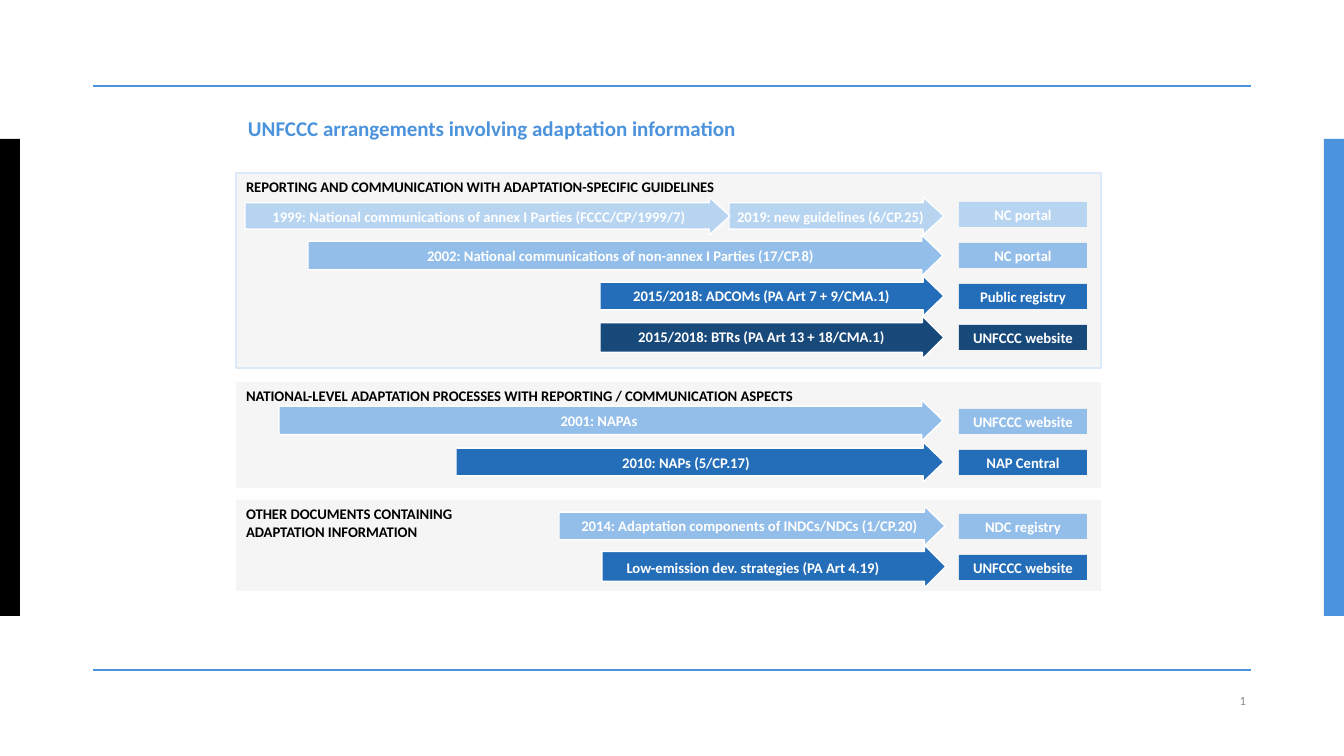
"""Build the slide on UNFCCC arrangements involving adaptation information."""
from lxml.etree import SubElement
from pptx import Presentation
from pptx.dml.color import RGBColor
from pptx.enum.shapes import MSO_CONNECTOR as CONNECTOR, MSO_SHAPE as SHAPE
from pptx.enum.text import MSO_ANCHOR as ANCHOR, PP_ALIGN as ALIGN
from pptx.oxml.ns import qn
from pptx.util import Pt

PX = 914400 / 100.8
THEME = {
    "font": "Calibri",
    "black": "000000", "white": "FFFFFF", "accent": "4B93DC", "number": "8C8C8C",
    "panel": "E7E6E6", "panel_edge": "DBE9F8",
    "pale": "B7D4F1", "light": "93BEEA", "mid": "246EB9", "dark": "18497B",
    "title_size": 15, "body_size": 10.5, "number_size": 9,
}
PANEL_OPACITY = "36000"
PANEL_LEFT, PANEL_WIDTH = 236, 865
DESTINATION_LEFT, DESTINATION_WIDTH, DESTINATION_HEIGHT, ROW_PITCH = 959, 128, 25, 41
LABEL_HEIGHT, ARROW_SHAFT = 24, 0.693
PANEL_INSETS, LABEL_INSETS, NUMBER_INSETS = (10, 5, 10, 5), (3, 3, 16, 12), (7, 4, 7, 4)

# each arrow: frame, head length, label left, label width, label drop, colour, label
PANELS = [
    {
        "heading": "REPORTING AND COMMUNICATION WITH ADAPTATION-SPECIFIC GUIDELINES",
        "top": 173, "height": 195, "edge": "panel_edge", "first_row": 202,
        "arrows": [
            ((729, 197, 215, 38), 0.549, 731, 212, 10, "pale", "2019: new guidelines (6/CP.25)"),
            ((245, 197, 485, 38), 0.549, 245, 481, 10, "pale",
             "1999: National communications of annex I Parties (FCCC/CP/1999/7)"),
            ((308, 235, 635, 41), 0.516, 321, 612, 11, "light",
             "2002: National communications of non-annex I Parties (17/CP.8)"),
            ((600, 276, 344, 40), 0.516, 600, 336, 10, "mid",
             "2015/2018: ADCOMs (PA Art 7 + 9/CMA.1)"),
            ((600, 316, 344, 43), 0.501, 602, 332, 11, "dark",
             "2015/2018: BTRs (PA Art 13 + 18/CMA.1)"),
        ],
        "destinations": [("NC portal", "pale"), ("NC portal", "light"),
                         ("Public registry", "mid"), ("UNFCCC website", "dark")],
    },
    {
        "heading": "NATIONAL-LEVEL ADAPTATION PROCESSES WITH REPORTING / COMMUNICATION ASPECTS",
        "top": 382, "height": 106, "edge": None, "first_row": 409,
        "arrows": [
            ((279, 400, 664, 41), 0.516, 288, 635, 11, "light", "2001: NAPAs"),
            ((456, 442, 488, 40), 0.516, 461, 463, 11, "mid", "2010: NAPs (5/CP.17)"),
        ],
        "destinations": [("UNFCCC website", "light"), ("NAP Central", "mid")],
    },
    {
        "heading": "OTHER DOCUMENTS CONTAINING\vADAPTATION INFORMATION",
        "top": 500, "height": 91, "edge": None, "first_row": 514,
        "arrows": [
            ((559, 506, 386, 40), 0.516, 575, 362, 10, "light",
             "2014: Adaptation components of INDCs/NDCs (1/CP.20)"),
            ((602, 545, 344, 43), 0.501, 612, 295, 13, "mid",
             "Low-emission dev. strategies (PA Art 4.19)"),
        ],
        "destinations": [("NDC registry", "light"), ("UNFCCC website", "mid")],
    },
]


def draw(preset, frame, fill, edge=None):
    part = slide.shapes.add_shape(preset, *(round(v * PX) for v in frame))
    part.shadow.inherit = False
    part.fill.solid()
    part.fill.fore_color.rgb = RGBColor.from_string(THEME[fill])
    if edge:
        part.line.color.rgb = RGBColor.from_string(THEME[edge])
        part.line.width = Pt(1)
    else:
        part.line.fill.background()
    return part


def write(part, words, color="white", size="body_size", align=ALIGN.CENTER,
          anchor=ANCHOR.MIDDLE, insets=PANEL_INSETS, spacing=None, bold=True):
    frame = part.text_frame
    frame.text = words
    sides = ("margin_left", "margin_top", "margin_right", "margin_bottom")
    frame_format = dict(zip(sides, (round(v * PX) for v in insets)))
    frame_format.update(word_wrap=True, vertical_anchor=anchor)
    paragraph = frame.paragraphs[0]
    formats = [
        (frame, frame_format),
        (paragraph, {"alignment": align, "line_spacing": spacing, "space_before": Pt(0)}),
    ]
    formats += [(run.font, {"name": THEME["font"], "size": Pt(THEME[size]), "bold": bold})
                for run in paragraph.runs]
    for target, values in formats:
        for name, value in values.items():
            setattr(target, name, value)
    for run in paragraph.runs:
        run.font.color.rgb = RGBColor.from_string(THEME[color])
    return paragraph


deck = Presentation()
deck.slide_width, deck.slide_height = round(1344 * PX), round(756 * PX)
slide = deck.slides.add_slide(deck.slide_layouts[5])

for bar_left, bar_color in ((0, "black"), (1324, "accent")):
    draw(SHAPE.RECTANGLE, (bar_left, 139, 20, 477), bar_color)

for rule_y in (86, 670):
    rule = slide.shapes.add_connector(
        CONNECTOR.STRAIGHT, *(round(v * PX) for v in (93, rule_y, 1251, rule_y)))
    rule.line.color.rgb = RGBColor.from_string(THEME["accent"])
    rule.line.width = Pt(1)
    SubElement(rule._element.spPr, qn("a:effectLst"))

title = slide.shapes.title
title_frame = {"left": 238, "top": 117, "width": 868, "height": 32}
for side, length in title_frame.items():
    setattr(title, side, round(length * PX))
write(title, "UNFCCC arrangements involving adaptation information", "accent", "title_size",
      ALIGN.LEFT, spacing=Pt(11.2))

page_number = slide.shapes.add_textbox(*(round(v * PX) for v in (1192, 687, 61, 28)))
number_line = write(page_number, "2", "number", "number_size", ALIGN.RIGHT,
                    insets=NUMBER_INSETS, bold=False)
number_run = number_line.runs[0]._r
number_run.tag = qn("a:fld")
number_run.set("id", "{B6F15528-21DE-4FAA-801E-634DDDAF4B2B}")
number_run.set("type", "slidenum")

for panel in PANELS:
    backdrop = draw(SHAPE.RECTANGLE, (PANEL_LEFT, panel["top"], PANEL_WIDTH, panel["height"]),
                    "panel", panel["edge"])
    tint = backdrop._element.spPr.find(qn("a:solidFill"))[0]
    SubElement(tint, qn("a:alpha"), val=PANEL_OPACITY)
    write(backdrop, panel["heading"], "black", align=ALIGN.LEFT, anchor=ANCHOR.TOP)

    for frame, head, _, _, _, color, _ in panel["arrows"]:
        arrow = draw(SHAPE.RIGHT_ARROW, frame, color, "white")
        arrow.adjustments[0], arrow.adjustments[1] = ARROW_SHAFT, head

    for frame, _, label_left, label_width, drop, _, words in panel["arrows"]:
        label_frame = (label_left, frame[1] + drop, label_width, LABEL_HEIGHT)
        label = slide.shapes.add_textbox(*(round(v * PX) for v in label_frame))
        write(label, words, anchor=ANCHOR.TOP, insets=LABEL_INSETS, spacing=0.9)

    for row, (place, color) in enumerate(panel["destinations"]):
        destination = draw(
            SHAPE.RECTANGLE,
            (DESTINATION_LEFT, panel["first_row"] + row * ROW_PITCH,
             DESTINATION_WIDTH, DESTINATION_HEIGHT), color)
        write(destination, place)

deck.save("out.pptx")
